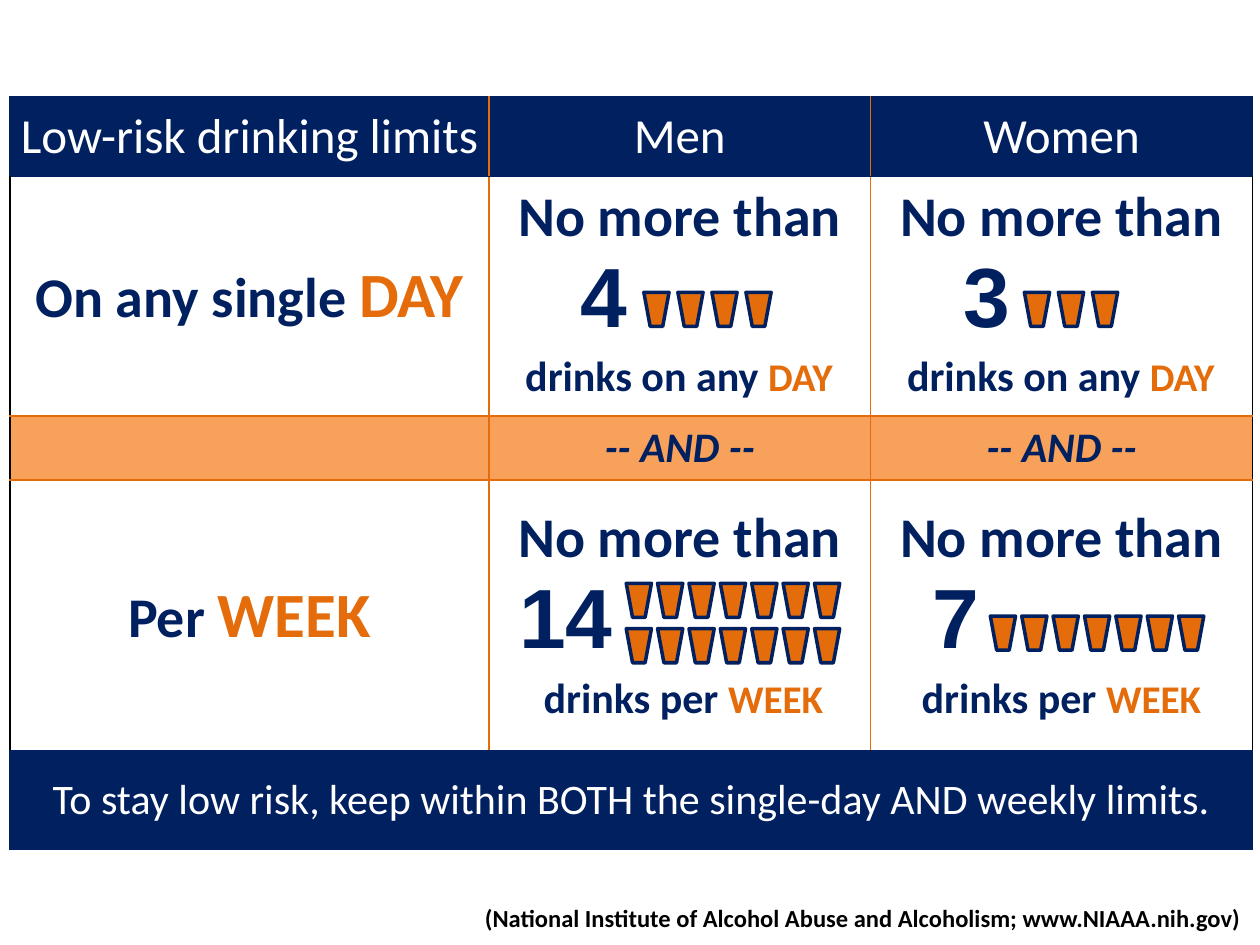
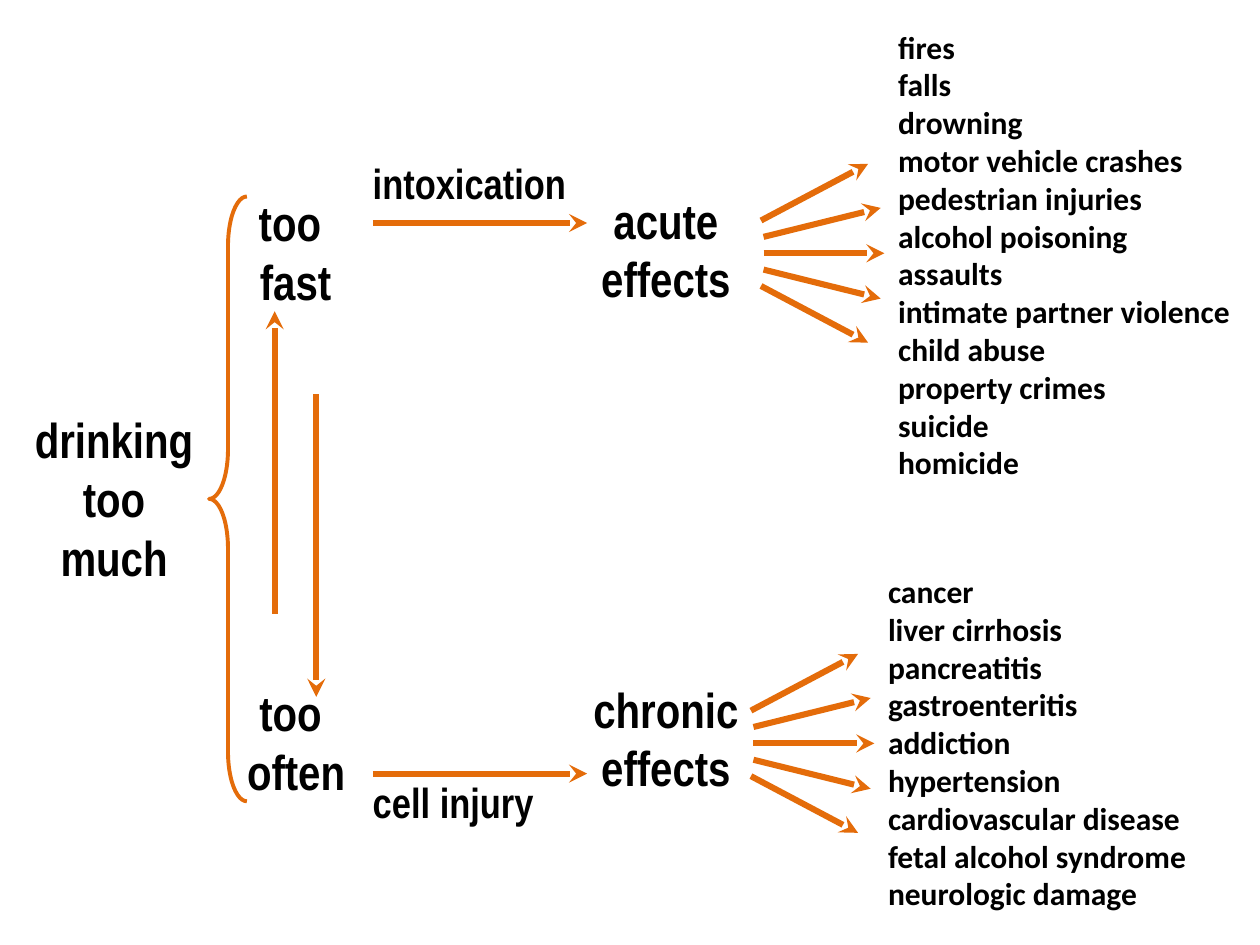
from dataclasses import dataclass
from lxml.etree import SubElement, Element
from pptx import Presentation
from pptx.dml.color import RGBColor
from pptx.enum.shapes import MSO_CONNECTOR as Link, MSO_SHAPE as Form
from pptx.enum.text import MSO_ANCHOR as Anchor, MSO_AUTO_SIZE as Fit, PP_ALIGN as Align
from pptx.oxml.ns import qn
from pptx.util import Inches, Pt

COLS, ROWS = 100, 75
WIDE, HIGH = Inches(10), Inches(7.5)


@dataclass(frozen=True)
class Look:
    size: int
    color: str
    font: str = "Calibri"
    bold: bool = True
    slant: bool = False
    small: bool = False


@dataclass(frozen=True)
class Theme:
    navy: str = "002060"
    orange: str = "E46C0A"
    peach: str = "F8A15A"
    black: str = "000000"
    head: Look = Look(28, "FFFFFF", bold=False)
    foot: Look = Look(24, "FFFFFF", bold=False)
    lead: Look = Look(32, "002060")
    term: Look = Look(36, "E46C0A")
    count: Look = Look(48, "002060", "Arial")
    unit: Look = Look(24, "002060")
    span: Look = Look(28, "E46C0A", small=True)
    join: Look = Look(24, "002060", slant=True)
    cite: Look = Look(14, "000000")
    harm: Look = Look(18, "000000")
    node: Look = Look(28, "000000", "Arial Narrow")
    label: Look = Look(24, "000000", "Arial Narrow")


@dataclass(frozen=True)
class Box:
    x: float
    y: float
    w: float = COLS
    h: float = ROWS

    def inner(self, x, y, w, h):
        return Box(self.x + x, self.y + y, w, h)

    def place(self):
        return col(self.x), row(self.y), col(self.w), row(self.h)


T = Theme()


def col(n):
    return round(WIDE * n / COLS)


def row(n):
    return round(HIGH * n / ROWS)


def tint(code):
    return RGBColor.from_string(code)


def style(run, look):
    font = run.font
    font.size, font.name = Pt(look.size), look.font
    font.bold, font.italic = look.bold, look.slant
    font.color.rgb = tint(look.color)
    if look.small:
        run._r.get_or_add_rPr().set("cap", "small")


def write(para, pairs, align=Align.CENTER, indent=0):
    para.alignment = align
    if indent:
        para._p.get_or_add_pPr().set("marL", str(col(indent)))
    for text, look in pairs:
        run = para.add_run()
        run.text = text
        style(run, look)


def note(slide, box, lines, look, align=Align.LEFT, wrap=True):
    frame = slide.shapes.add_textbox(*box.place()).text_frame
    frame.word_wrap, frame.auto_size = wrap, Fit.SHAPE_TO_FIT_TEXT
    frame.text = "\n".join(lines)
    for para in frame.paragraphs:
        para.alignment = align
        for run in para.runs:
            style(run, look)


def form(slide, kind, box, line, width, fill=None):
    shape = slide.shapes.add_shape(kind, *box.place())
    shape.shadow.inherit = False
    if fill:
        shape.fill.solid()
        shape.fill.fore_color.rgb = tint(fill)
    else:
        shape.fill.background()
    shape.line.color.rgb, shape.line.width = tint(line), Pt(width)
    return shape


def arrow(slide, x1, y1, x2, y2):
    link = slide.shapes.add_connector(Link.STRAIGHT, col(x1), row(y1), col(x2), row(y2))
    link.line.color.rgb, link.line.width = tint(T.orange), Pt(3.5)
    props = link.element.spPr
    SubElement(props.find(qn("a:ln")), qn("a:tailEnd"), type="stealth")
    SubElement(props, qn("a:effectLst"))


def edge(cell, sides):
    props = cell._tc.get_or_add_tcPr()
    for i, (side, color) in enumerate(sides.items()):
        line = Element(qn("a:ln" + side), w=str(Pt(1)))
        SubElement(SubElement(line, qn("a:solidFill")), qn("a:srgbClr"), val=color)
        props.insert(i, line)


def frame_cell(cell, i, j, last):
    band = i in (0, last)
    rim = T.navy if band else T.black
    cell.margin_left = cell.margin_right = col(0.5)
    cell.margin_top = cell.margin_bottom = row(0.5)
    cell.vertical_anchor = Anchor.TOP if i == 1 and j else Anchor.MIDDLE
    fill = T.navy if band else T.peach if i == 2 else None
    if fill:
        cell.fill.solid()
        cell.fill.fore_color.rgb = tint(fill)
    else:
        cell.fill.background()

    def flat(n):
        return T.orange if n in (2, 3) else T.navy

    def tall(n):
        return rim if n in (0, 3) else T.navy if i == last else T.orange

    edge(cell, {"L": tall(j), "R": tall(j + 1), "T": flat(i), "B": flat(i + 1)})


def cups(slide, box, count, across, step):
    for n in range(count):
        y, x = divmod(n, across)
        cup = form(slide, Form.TRAPEZOID, box.inner(x * step, y * 3.6, 2, 2.7),
                   T.navy, 2, T.orange)
        cup.rotation = 180


def limit(slide, cell, box, count, unit, span, indent, shift, x, y, across, step):
    frame = cell.text_frame
    write(frame.paragraphs[0], [("No more than", T.lead)])
    write(frame.add_paragraph(), [(str(count), T.count)], Align.LEFT, indent)
    write(frame.add_paragraph(), [(unit, T.unit), (span, T.span)], indent=shift)
    cups(slide, box.inner(x, y, 2, 2.7), count, across, step)


def limits(slide, box):
    wide, high = (38, 30.3, 30.3), (6.3, 19, 5.1, 21.5, 7.8)
    last = len(high) - 1
    grid = slide.shapes.add_table(len(high), len(wide), *box.place()).table
    grid.first_row = grid.horz_banding = False
    for line, size in zip(grid.columns, wide):
        line.width = col(size)
    for line, size in zip(grid.rows, high):
        line.height = row(size)
    for i in range(len(high)):
        for j in range(len(wide)):
            frame_cell(grid.cell(i, j), i, j, last)
    grid.cell(last, 0).merge(grid.cell(last, 2))
    words = {
        (0, 0): [("Low-risk drinking limits", T.head)],
        (0, 1): [("Men", T.head)],
        (0, 2): [("Women", T.head)],
        (1, 0): [("On any single ", T.lead), ("DAY", T.term)],
        (2, 1): [("-- AND --", T.join)],
        (2, 2): [("-- AND --", T.join)],
        (3, 0): [("Per ", T.lead), ("WEEK", T.term)],
        (last, 0): [("To stay low risk, keep within BOTH the single-day "
                     "AND weekly limits.", T.foot)],
    }
    for spot, pairs in words.items():
        write(grid.cell(*spot).text_frame.paragraphs[0], pairs)
    day, week = ("drinks on any ", "day "), ("drinks per ", "week")
    for i, j, count, unit, *rest in (
        (1, 1, 4, day, 6.8, 0.6, 12.3, 9.2, 4, 2.7),
        (1, 2, 3, day, 6.9, 0.6, 12.2, 9.2, 3, 2.7),
        (3, 1, 14, week, 1.9, 0.6, 10.9, 8.2, 7, 2.49),
        (3, 2, 7, week, 4.4, 0, 9.5, 10.8, 7, 2.49),
    ):
        spot = box.inner(sum(wide[:j]), sum(high[:i]), wide[j], high[i])
        limit(slide, grid.cell(i, j), spot, count, *unit, *rest)


def source(slide, box):
    note(slide, box, ["(National Institute of Alcohol Abuse and Alcoholism; "
                      "www.NIAAA.nih.gov)"], T.cite, wrap=False)


def causes(slide, box):
    note(slide, box.inner(0, 16.4, 15.3, 15.1), ["drinking too much"], T.node, Align.CENTER)
    brace = form(slide, Form.LEFT_BRACE, box.inner(15.2, 0, 3, 48), T.orange, 2.25)
    brace.adjustments[0] = 1.31
    for x, y, w, word in ((16.5, -0.8, 11.1, "fast"), (16.8, 38.1, 10.6, "often")):
        note(slide, box.inner(x, y, w, 10.4), ["too ", word], T.node, Align.CENTER)
    for x, start, end in ((20.4, 33.1, 9.1), (23.7, 15.7, 39.7)):
        arrow(slide, box.x + x, box.y + start, box.x + x, box.y + end)


def fan(slide, x, y):
    arrow(slide, x, y, x + 9.6, y)
    for side in (1, -1):
        for dx, dy, ex, ey in ((0, 1.3, 9.3, 3.6), (-0.2, 2.6, 8.3, 7.1)):
            arrow(slide, x + dx, y + side * dy, x + ex, y + side * ey)


def lane(slide, box, label, rise, line, effect, hub, harms, top, wrap):
    note(slide, box.inner(0, rise, 17.5, 5), [label], T.label)
    arrow(slide, box.x + 1, box.y + line, box.x + 18, box.y + line)
    note(slide, box.inner(17.1, 0, 14.3, 10.4), [effect], T.node, Align.CENTER)
    fan(slide, box.x + hub[0], box.y + hub[1])
    high = 1 + 3.03 * len(harms)
    note(slide, box.inner(hub[0] + 9.7, top, 28.7, high), harms, T.harm, wrap=wrap)


def main():
    deck = Presentation()
    deck.slide_width, deck.slide_height = WIDE, HIGH
    first, second = (deck.slides.add_slide(deck.slide_layouts[6]) for _ in range(2))
    limits(first, Box(0.8, 7.7, 98.6, 59.7))
    source(first, Box(37.5, 71.2, 62.5, 3.4))
    causes(second, Box(1.4, 15.6, 28, 48))
    acute = ["fires", "falls", "drowning", "motor vehicle crashes",
             "pedestrian injuries", "alcohol poisoning", "assaults",
             "intimate partner violence", "child abuse", "property crimes",
             "suicide", "homicide"]
    chronic = ["cancer", "liver cirrhosis", "pancreatitis", "gastroenteritis",
               "addiction", "hypertension", "cardiovascular disease",
               "fetal alcohol syndrome", "neurologic damage"]
    lane(second, Box(28.6, 14.6), "intoxication", -2.6, 3.1, "acute effects",
         (32, 5.5), acute, -12.9, False)
    lane(second, Box(28.6, 53.4), "cell injury", 7.7, 8, "chronic effects",
         (31.2, 5.6), chronic, -8.5, True)
    deck.save("out.pptx")


if __name__ == "__main__":
    main()
